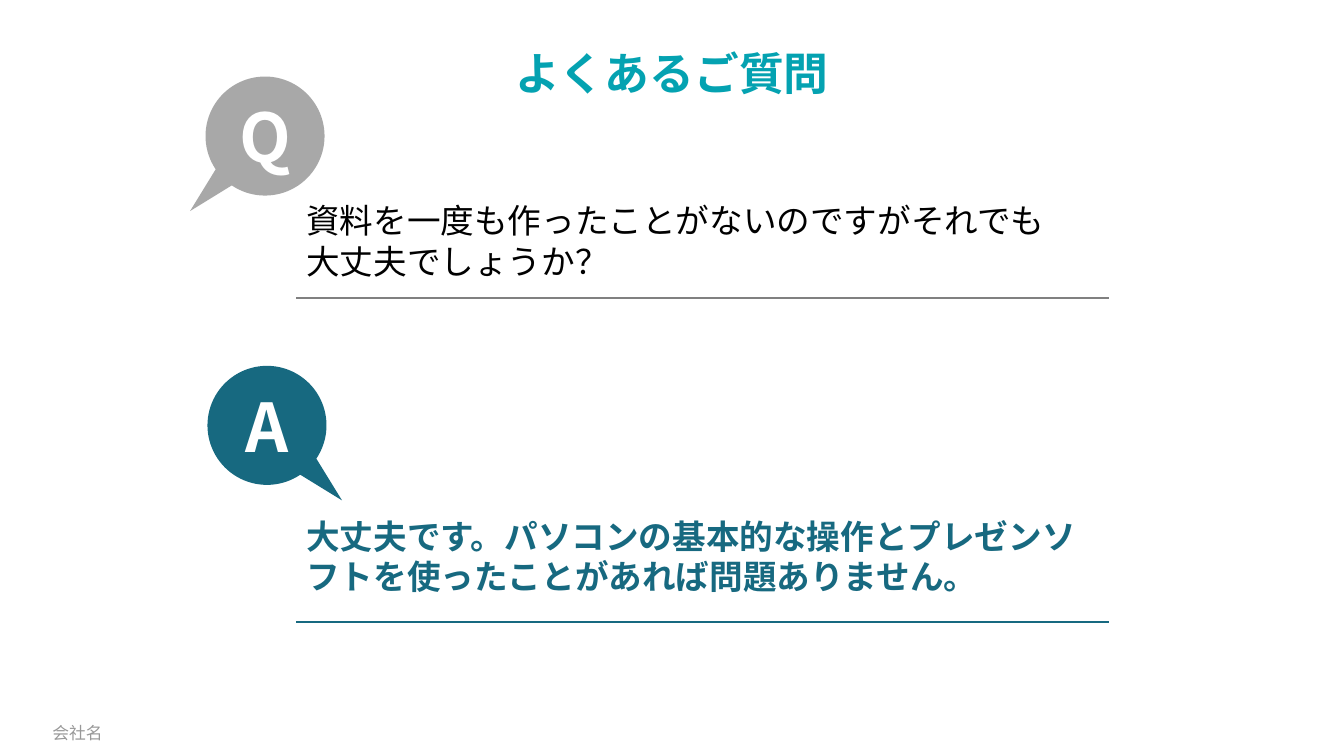
from lxml.etree import SubElement
from pptx import Presentation
from pptx.dml.color import RGBColor
from pptx.enum.shapes import MSO_CONNECTOR, MSO_SHAPE
from pptx.enum.text import MSO_ANCHOR, MSO_AUTO_SIZE, PP_ALIGN
from pptx.oxml.ns import qn
from pptx.util import Cm, Pt

TURQUOISE = RGBColor(0x04, 0xA2, 0xB1)
TEAL = RGBColor(0x17, 0x69, 0x80)
BLACK = RGBColor(0x00, 0x00, 0x00)
WHITE = RGBColor(0xFF, 0xFF, 0xFF)
BUBBLE_GRAY = RGBColor(0xA8, 0xA8, 0xA8)
RULE_GRAY = RGBColor(0x80, 0x80, 0x80)
FOOTER_GRAY = RGBColor(0x98, 0x98, 0x98)

# Shared column of the question and answer, in cm
TEXT_LEFT, TEXT_WIDTH = 7.47, 20.47
BUBBLE_SIZE = 3.0


class FaqSlide:
    font = "Noto Sans CJK JP"

    def __init__(self, prs):
        self.s = prs.slides.add_slide(prs.slide_layouts[5])

    def set_text(self, sp, text, size, color, bold=False, font=None,
                 align=PP_ALIGN.LEFT, anchor=MSO_ANCHOR.MIDDLE):
        tf = sp.text_frame
        tf.word_wrap = True
        tf.auto_size = MSO_AUTO_SIZE.NONE
        tf.vertical_anchor = anchor
        p = tf.paragraphs[0]
        p.text = text
        p.alignment = align
        for r in p.runs:
            r.font.size = Pt(size)
            r.font.bold = bold
            r.font.color.rgb = color
            r.font.name = font or self.font
            # Japanese glyphs take the East Asian typeface
            ea = SubElement(r.font._element, qn("a:ea"))
            ea.set("typeface", r.font.name)
        return p

    def title(self, text, top, width, height):
        sp = self.s.shapes.title
        sp.left, sp.top, sp.width, sp.height = 0, Cm(top), width, Cm(height)
        p = self.set_text(sp, text, 32, TURQUOISE, True, align=PP_ALIGN.CENTER)
        p.line_spacing = 1.1

    def footer(self, text, left, top, width, height):
        sp = self.s.shapes.add_textbox(Cm(left), Cm(top), Cm(width), Cm(height))
        self.set_text(sp, text, 12, FOOTER_GRAY, font="Calibri")

    def sentence(self, text, top, height, color, bold=False):
        sp = self.s.shapes.add_textbox(
            Cm(TEXT_LEFT), Cm(top), Cm(TEXT_WIDTH), Cm(height))
        tf = sp.text_frame
        tf.margin_top, tf.margin_bottom = Cm(0.2), Cm(0.13)
        p = self.set_text(sp, text, 24, color, bold, anchor=MSO_ANCHOR.TOP)
        p.space_after = Pt(6)

    def bubble(self, letter, left, top, color, tail):
        sp = self.s.shapes.add_shape(
            MSO_SHAPE.OVAL_CALLOUT, Cm(left), Cm(top),
            Cm(BUBBLE_SIZE), Cm(BUBBLE_SIZE))
        sp.shadow.inherit = False
        sp.adjustments[0], sp.adjustments[1] = tail, 0.63
        sp.fill.solid()
        sp.fill.fore_color.rgb = color
        sp.line.fill.background()
        self.set_text(sp, letter, 48, WHITE, True, align=PP_ALIGN.CENTER)

    def rule(self, top, color):
        line = self.s.shapes.add_connector(
            MSO_CONNECTOR.STRAIGHT, Cm(TEXT_LEFT), Cm(top),
            Cm(TEXT_LEFT + TEXT_WIDTH), Cm(top))
        line.line.color.rgb = color
        line.line.width = Pt(1.5)
        SubElement(line._element.spPr, qn("a:effectLst"))


def main():
    prs = Presentation()
    prs.slide_width, prs.slide_height = Cm(33.87), Cm(19.05)
    faq = FaqSlide(prs)

    # Title and footer
    faq.title("よくあるご質問", 0.91, prs.slide_width, 1.7)
    faq.footer("会社名", 1.07, 17.96, 10, 1.02)

    # Question
    faq.sentence("資料を一度も作ったことがないのですがそれでも\n大丈夫でしょうか？",
                 4.85, 2.18, BLACK)
    faq.bubble("Q", 5.18, 1.93, BUBBLE_GRAY, tail=-0.63)
    faq.rule(7.52, RULE_GRAY)

    # Answer
    faq.bubble("A", 5.23, 9.22, TEAL, tail=0.63)
    faq.sentence("大丈夫です。パソコンの基本的な操作とプレゼンソフトを"
                 "使ったことがあれば問題ありません。", 12.8, 2.36, TEAL, True)
    faq.rule(15.67, TEAL)

    prs.save("out.pptx")


if __name__ == "__main__":
    main()
